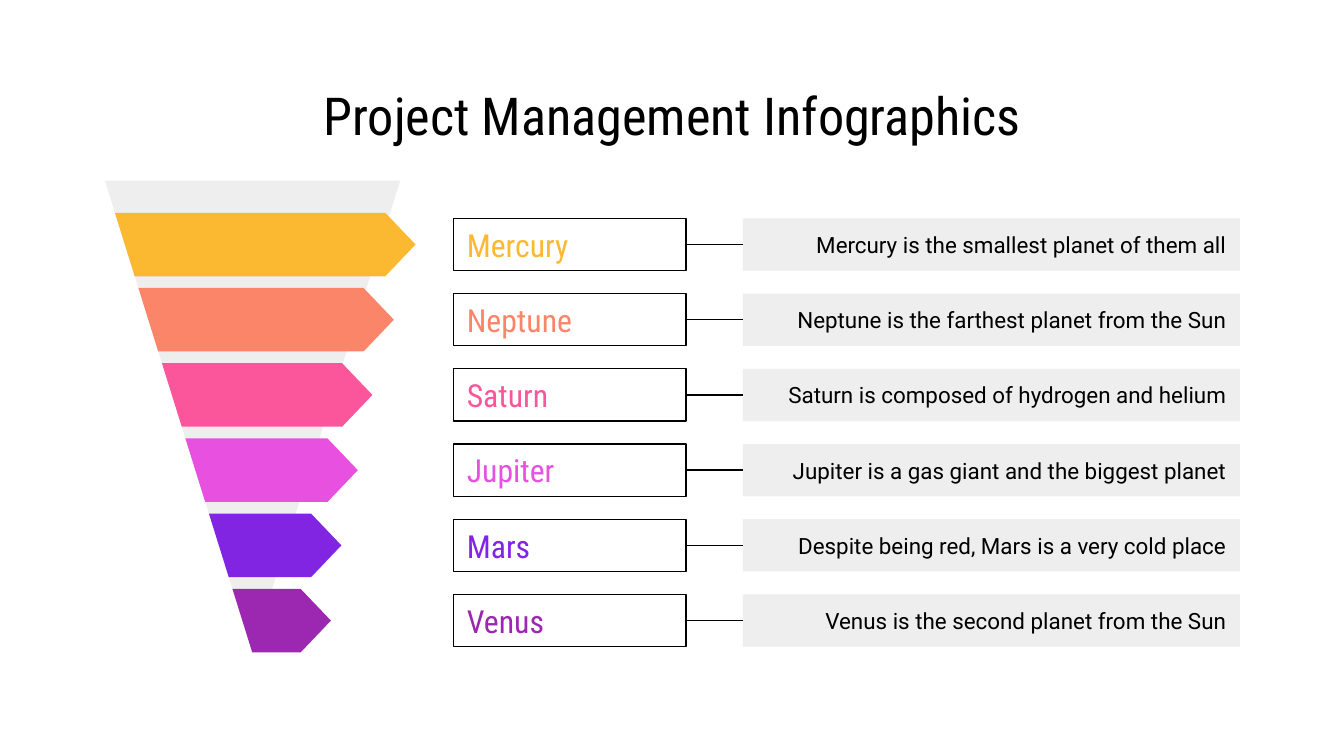
from lxml.etree import SubElement
from pptx import Presentation
from pptx.dml.color import RGBColor
from pptx.enum.shapes import MSO_CONNECTOR as Connector, MSO_SHAPE as Shape
from pptx.enum.text import MSO_ANCHOR as Anchor, PP_ALIGN as Align
from pptx.oxml.ns import qn
from pptx.util import Pt

BLACK, GREY = "000000", "EEEEEE"
PLANETS = [
    ("Mercury", "FBB831", 222.6, "Mercury is the smallest planet of them all"),
    ("Neptune", "FB8569", 211, "Neptune is the farthest planet from the Sun"),
    ("Saturn", "FB569C", 199.5, "Saturn is composed of hydrogen and helium"),
    ("Jupiter", "E850E0", 191.7, "Jupiter is a gas giant and the biggest planet"),
    ("Mars", "8225E2", 182.9, "Despite being red, Mars is a very cold place"),
    ("Venus", "9C27B0", 177.3, "Venus is the second planet from the Sun"),
]
FIRST_MIDDLE, PITCH = 131, 40.3
ARROW_HEIGHT, ARROW_TIP, BOX_HEIGHT = 34, 16.2, 28
FUNNEL_LEFT, FUNNEL_RIGHT, FUNNEL_TOP = 56.2, 214.4, 96.8
FUNNEL_POINT = (135.1, 349.3)
FUNNEL_SLOPE = (FUNNEL_POINT[0] - FUNNEL_LEFT) / (FUNNEL_POINT[1] - FUNNEL_TOP)
NAME_LEFT, NAME_WIDTH = 243, 124.5
FACT_LEFT, FACT_WIDTH = 398, 266.2


def rgb(value):
    return RGBColor.from_string(value)


class PlanetSlide:
    """Holds the style and the slide being drawn."""

    heading_font, body_font, line_width = "Roboto Condensed", "Roboto", 0.75

    def __init__(self, slide):
        self.shapes = slide.shapes

    def label(self, shape, text, size, font, color, align):
        frame = shape.text_frame
        inset = Pt(7.2)
        layout = {"word_wrap": True, "vertical_anchor": Anchor.MIDDLE,
                  "margin_left": inset, "margin_right": inset,
                  "margin_top": inset, "margin_bottom": inset}
        for name, value in layout.items():
            setattr(frame, name, value)
        paragraph = frame.paragraphs[0]
        paragraph.alignment = align
        run = paragraph.add_run()
        run.text = text
        for name, value in {"size": Pt(size), "name": font}.items():
            setattr(run.font, name, value)
        run.font.color.rgb = rgb(color)

    def title(self, text, left, top, width, height):
        heading = self.shapes.add_textbox(Pt(left), Pt(top), Pt(width), Pt(height))
        self.label(heading, text, 28, self.heading_font, BLACK, Align.CENTER)

    def polygon(self, points, color):
        corners = [(Pt(x), Pt(y)) for x, y in points]
        builder = self.shapes.build_freeform(*corners[0])
        builder.add_line_segments(corners[1:], close=True)
        outline = builder.convert_to_shape()
        self.paint(outline, fill=color)
        return outline

    def paint(self, shape, fill=None, line=None):
        shape.shadow.inherit = False
        if fill:
            shape.fill.solid()
            shape.fill.fore_color.rgb = rgb(fill)
        else:
            shape.fill.background()
        if line:
            shape.line.color.rgb = rgb(line)
            shape.line.width = Pt(self.line_width)
        else:
            shape.line.fill.background()

    def box(self, left, middle, width, fill=None, line=None):
        box = self.shapes.add_shape(Shape.RECTANGLE, Pt(left), Pt(middle - BOX_HEIGHT / 2),
                                    Pt(width), Pt(BOX_HEIGHT))
        self.paint(box, fill, line)
        return box

    def link(self, start, end, middle):
        link = self.shapes.add_connector(Connector.STRAIGHT, Pt(start), Pt(middle),
                                         Pt(end), Pt(middle))
        link.line.color.rgb = rgb(BLACK)
        link.line.width = Pt(self.line_width)
        SubElement(link._element.spPr, qn("a:effectLst"))
        return link

    def arrow(self, middle, tip, color):
        top, bottom = middle - ARROW_HEIGHT / 2, middle + ARROW_HEIGHT / 2
        upper, lower = (FUNNEL_LEFT + FUNNEL_SLOPE * (y - FUNNEL_TOP) for y in (top, bottom))
        shoulder = tip - ARROW_TIP
        return self.polygon([(upper, top), (lower, bottom), (shoulder, bottom),
                             (tip, middle), (shoulder, top)], color)

    def row(self, middle, planet, color, fact):
        name_box = self.box(NAME_LEFT, middle, NAME_WIDTH, line=BLACK)
        self.label(name_box, planet, 17, self.heading_font, color, Align.LEFT)
        fact_box = self.box(FACT_LEFT, middle, FACT_WIDTH, fill=GREY)
        self.label(fact_box, fact, 12, self.body_font, BLACK, Align.RIGHT)
        link = self.link(NAME_LEFT + NAME_WIDTH, FACT_LEFT, middle)
        self.group([name_box, fact_box, link])

    def group(self, members):
        self.shapes.add_group_shape(members)


def main():
    deck = Presentation()
    deck.slide_width, deck.slide_height = Pt(720), Pt(405)
    page = PlanetSlide(deck.slides.add_slide(deck.slide_layouts[6]))
    page.title("Project Management Infographics", 56, 42.5, 608, 38)

    middles = [FIRST_MIDDLE + index * PITCH for index in range(len(PLANETS))]
    funnel = page.polygon([(FUNNEL_RIGHT, FUNNEL_TOP), (FUNNEL_LEFT, FUNNEL_TOP),
                           FUNNEL_POINT], GREY)
    arrows = [page.arrow(middle, tip, color)
              for middle, (_, color, tip, _) in zip(middles, PLANETS)]
    page.group([funnel, *reversed(arrows)])
    for middle, (planet, color, _, fact) in zip(middles, PLANETS):
        page.row(middle, planet, color, fact)
    deck.save("out.pptx")


if __name__ == "__main__":
    main()
